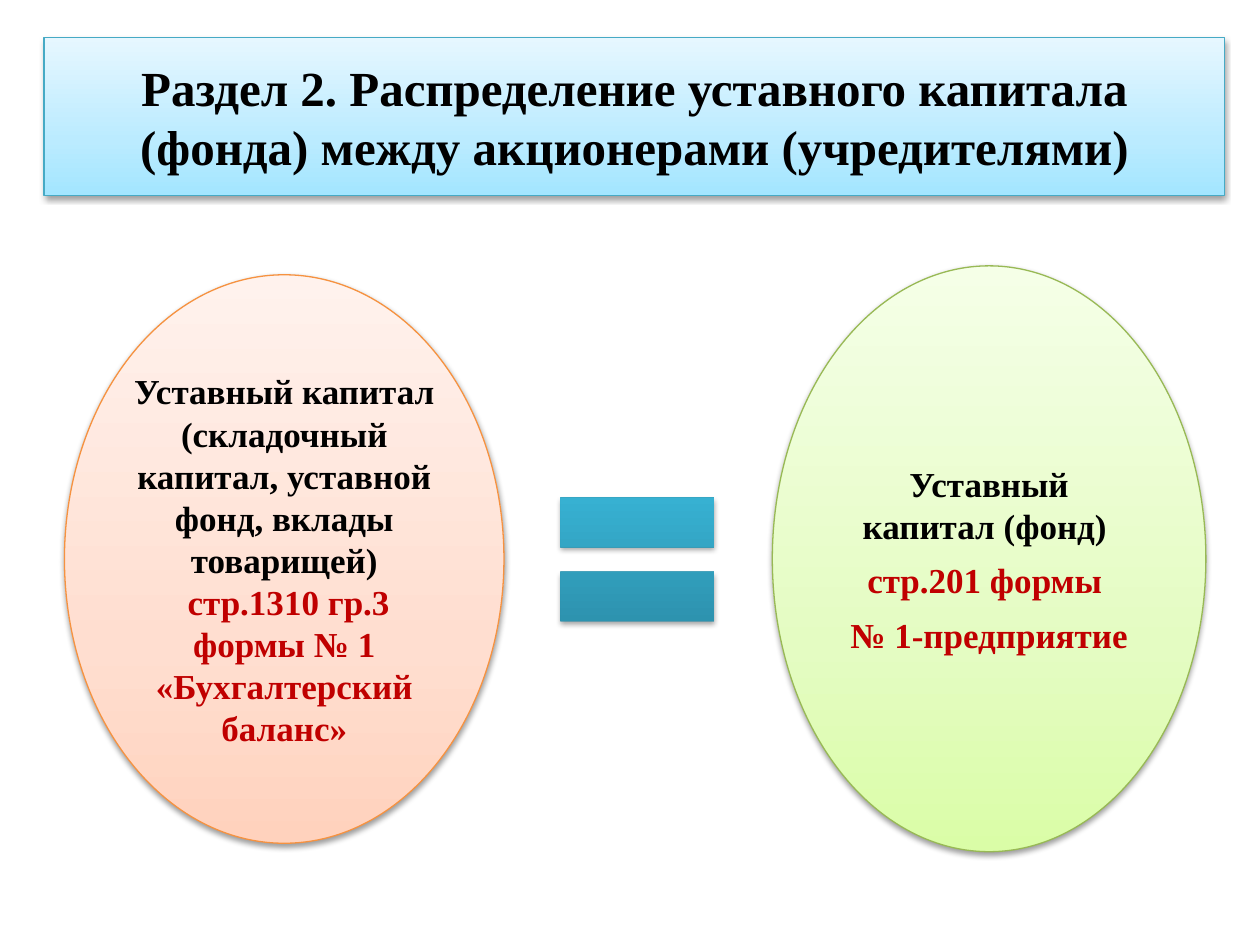
from lxml import etree
from pptx import Presentation
from pptx.enum import shapes, text
from pptx.dml.color import RGBColor
from pptx.oxml import parse_xml
from pptx.oxml.ns import nsdecls
from pptx.util import Cm, Pt

FONT = "Times New Roman"
COLORS = {"black": "000000", "red": "C00000", "title": "46AAC5",
          "balance": "F69240", "enterprise": "98B955"}
GRADIENTS = {  # (position in percent, colour), from bottom to top
    "title": [(0, "A3E6FF"), (35, "BBEBFF"), (100, "E6F7FF")],
    "balance": [(0, "FFD2BD"), (35, "FFDED0"), (100, "FFF2ED")],
    "enterprise": [(0, "DAFDA7"), (35, "E4FCC2"), (100, "F5FFE7")],
    "equals": [(0, "2A88A2"), (80, "37B1D2"), (100, "34B4D6")],
}
TITLE = [("Раздел 2. Распределение уставного капитала (фонда) между "
          "акционерами (учредителями)", "black")]
TITLE_BOX = (0.89, 0.76, 23.8, 3.18)
EQUALS_BOX = (10.74, 9.17, 4.22, 4.22)
OVALS = [
    {"name": "balance", "box": (1.3, 5.54, 8.86, 11.46), "space_after": 0,
     "lines": [("Уставный капитал (складочный капитал, уставной фонд, "
                "вклады товарищей)", "black"),
               (" стр.1310 гр.3 формы № 1 «Бухгалтерский баланс»", "red")]},
    {"name": "enterprise", "box": (15.57, 5.36, 8.74, 11.81), "space_after": 7,
     "lines": [("Уставный капитал (фонд) ", "black"),
               ("стр.201 формы ", "red"),
               ("№ 1-предприятие", "red")]},
]


def add_effects(shape, stops, opacity, distance):
    """Give the shape an upward gradient and a soft shadow below it."""
    shape.fill.gradient()
    shape.fill.gradient_angle = 90
    properties = shape.element.spPr
    stop_list = properties.find(".//{*}gsLst")
    for stop in list(stop_list):
        stop_list.remove(stop)
    for position, color in stops:
        stop = etree.SubElement(stop_list, stop_list.tag.replace("gsLst", "gs"),
                                pos=str(position * 1000))
        etree.SubElement(stop, stop.tag.replace("}gs", "}srgbClr"), val=color)
    shape.shadow.inherit = False
    effects = properties.find("{*}effectLst")
    effects.append(parse_xml(
        f'<a:outerShdw {nsdecls("a")} blurRad="{Pt(3.1)}" dist="{Pt(distance)}" '
        f'dir="5400000" rotWithShape="0"><a:srgbClr val="{COLORS["black"]}">'
        f'<a:alpha val="{opacity * 1000}"/></a:srgbClr></a:outerShdw>'))


def add_shape(slide, kind, box, name, line=None, opacity=38, distance=1.6):
    shape = slide.shapes.add_shape(kind, *map(Cm, box))
    add_effects(shape, GRADIENTS[name], opacity, distance)
    if line:
        shape.line.color.rgb = RGBColor.from_string(line)
        shape.line.width = Pt(0.75)
    else:
        shape.line.fill.background()
    return shape


def write_text(frame, lines, size=20, space_after=0, margin=None):
    frame.word_wrap = True
    frame.vertical_anchor = text.MSO_ANCHOR.MIDDLE
    if margin is not None:
        frame.margin_left = frame.margin_right = Cm(margin)
        frame.margin_top = frame.margin_bottom = Cm(margin)
    for index, (words, color) in enumerate(lines):
        paragraph = frame.add_paragraph() if index else frame.paragraphs[0]
        paragraph.alignment = text.PP_ALIGN.CENTER
        paragraph.space_after = Pt(space_after)
        run = paragraph.add_run()
        run.text = words
        run.font.name, run.font.size, run.font.bold = FONT, Pt(size), True
        run.font.color.rgb = RGBColor.from_string(COLORS[color])


def inscribed(left, top, width, height):
    """Box that fits inside the oval: its sides shrink by the root of two."""
    ratio = 0.5 ** 0.5
    inset = (1 - ratio) / 2
    return left + width * inset, top + height * inset, width * ratio, height * ratio


presentation = Presentation()
presentation.slide_width, presentation.slide_height = Cm(25.4), Cm(19.05)
slide = presentation.slides.add_slide(presentation.slide_layouts[6])

title = add_shape(slide, shapes.MSO_SHAPE.RECTANGLE, TITLE_BOX, "title", COLORS["title"])
write_text(title.text_frame, TITLE, size=28)

for oval in OVALS:
    add_shape(slide, shapes.MSO_SHAPE.OVAL, oval["box"], oval["name"], COLORS[oval["name"]])
    label = slide.shapes.add_textbox(*map(Cm, inscribed(*oval["box"])))
    write_text(label.text_frame, oval["lines"], space_after=oval["space_after"], margin=0.07)

add_shape(slide, shapes.MSO_SHAPE.MATH_EQUAL, EQUALS_BOX, "equals", opacity=35, distance=1.8)

presentation.save("out.pptx")
